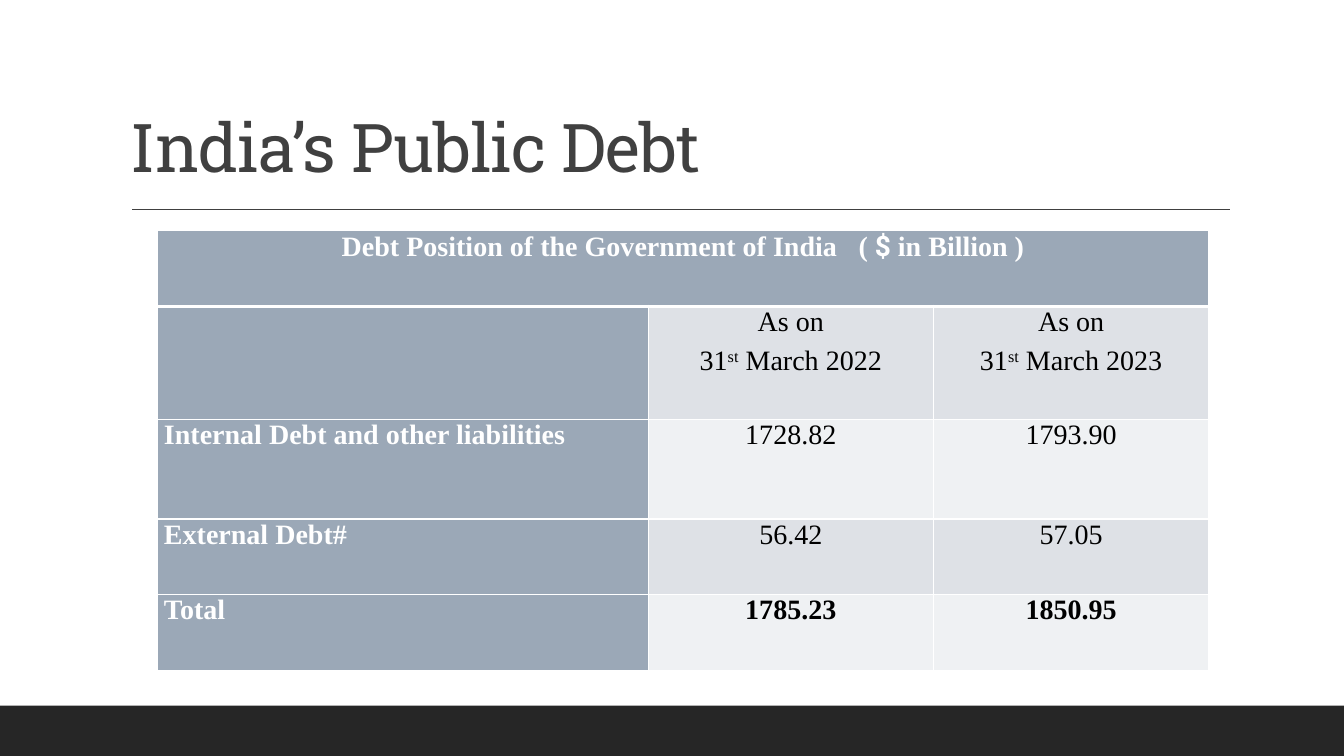
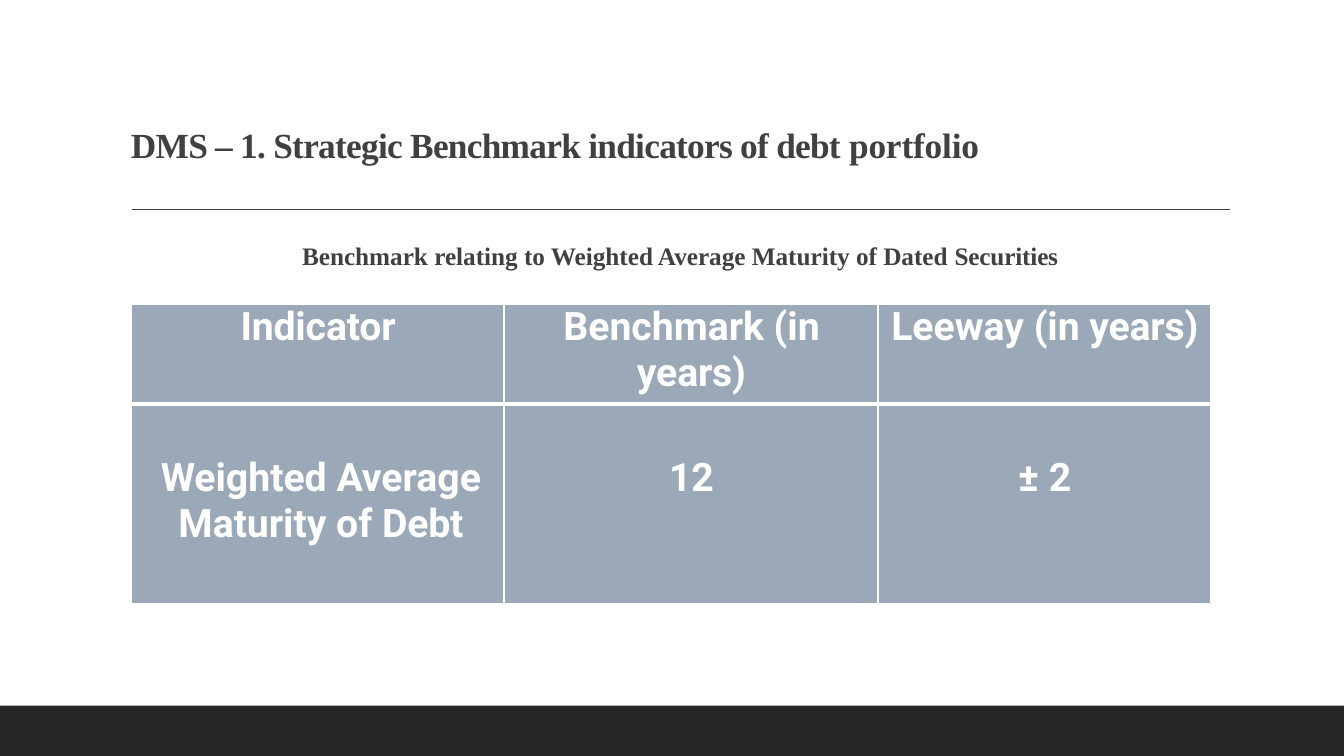
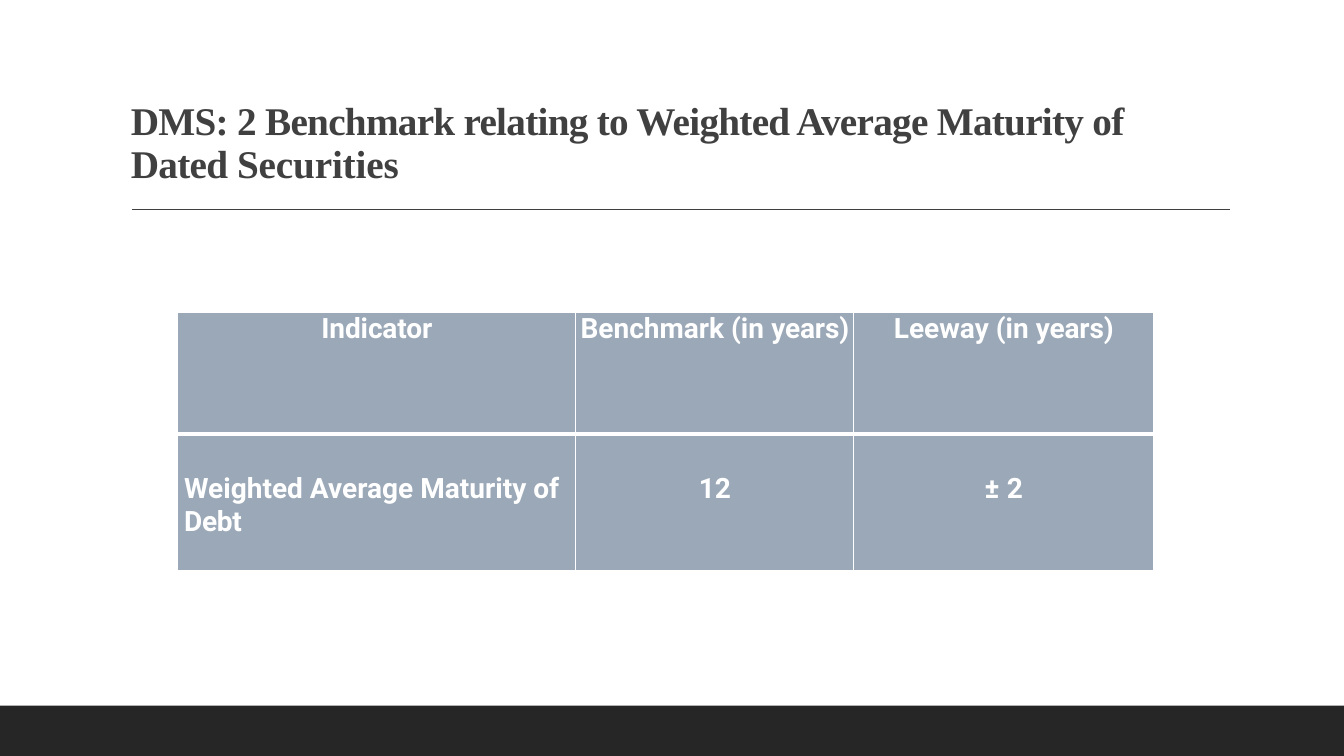
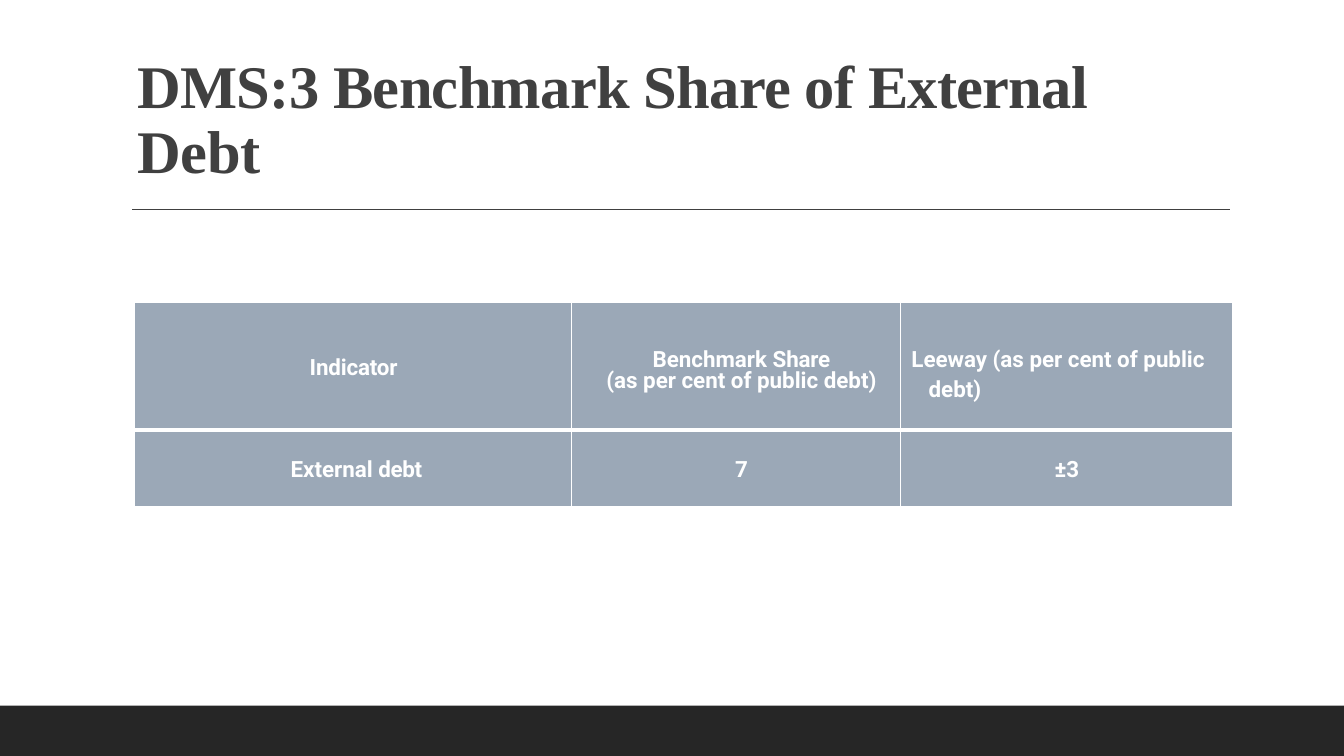
from dataclasses import dataclass

from lxml.etree import SubElement
from pptx import Presentation
from pptx.dml.color import RGBColor
from pptx.enum.shapes import MSO_CONNECTOR, MSO_SHAPE
from pptx.enum.text import MSO_ANCHOR, PP_ALIGN
from pptx.oxml import parse_xml
from pptx.oxml.ns import nsdecls, qn
from pptx.util import Inches, Pt

COLOURS = {
    "band": "262626",
    "title": "404040",
    "header": "9BA8B7",
    "dark_row": "DEE1E6",
    "light_row": "EFF1F3",
    "white": "FFFFFF",
    "black": "000000",
}
SERIF, SANS, SLAB = "Times New Roman", "Roboto", "Roboto Slab"
BLANK_LAYOUT = 6
TITLE_HEIGHT = 21.2


def colour(name):
    return RGBColor.from_string(COLOURS[name])


@dataclass
class Run:
    text: str
    spacing: float = 0
    font: str = ""
    raised: bool = False


@dataclass
class Style:
    size: float
    font: str = SANS
    colour: str = "white"
    bold: bool = True
    align: PP_ALIGN = PP_ALIGN.CENTER
    line_spacing: object = None
    space_after: float = 0


@dataclass
class Cell:
    """Paragraphs are lists of runs; top, left, right and hang are percentages of the slide."""
    paragraphs: list
    style: Style
    fill: str = "header"
    top: float = 0
    left: float = 0.08
    right: float = 0
    hang: float = 0
    columns: int = 1


class Deck:
    """Holds the shared style and the current slide; lengths are percentages of its size."""

    def __init__(self):
        self.presentation = Presentation()
        self.presentation.slide_width = Inches(13.33)
        self.presentation.slide_height = Inches(7.5)
        self.slide = None

    def x(self, share):
        return round(self.presentation.slide_width * share / 100)

    def y(self, share):
        return round(self.presentation.slide_height * share / 100)

    def new_slide(self):
        layout = self.presentation.slide_layouts[BLANK_LAYOUT]
        self.slide = self.presentation.slides.add_slide(layout)
        self.band()
        self.rule()

    def band(self):
        shape = self.slide.shapes.add_shape(
            MSO_SHAPE.RECTANGLE, 0, self.y(93.33), self.x(100), self.y(6.67))
        shape.shadow.inherit = False
        shape.fill.solid()
        shape.fill.fore_color.rgb = colour("band")
        shape.line.fill.background()

    def rule(self):
        height = self.y(27.7)
        connector = self.slide.shapes.add_connector(
            MSO_CONNECTOR.STRAIGHT, self.x(9.83), height, self.x(91.55), height)
        connector.line.color.rgb = colour("title")
        connector.line.width = Pt(1)
        SubElement(connector._element.spPr, qn("a:effectLst"))

    def fill_frame(self, frame, paragraphs, style, hang=0):
        for index, runs in enumerate(paragraphs):
            paragraph = frame.add_paragraph() if index else frame.paragraphs[0]
            paragraph.alignment = style.align
            paragraph.line_spacing = style.line_spacing
            paragraph.space_after = Pt(style.space_after)
            if hang:
                properties = paragraph._p.get_or_add_pPr()
                properties.set("marL", str(self.x(hang)))
                properties.set("indent", str(-self.x(hang)))
            for item in runs:
                self.run(paragraph, item, style)

    def run(self, paragraph, item, style):
        run = paragraph.add_run()
        run.text = item.text
        run.font.name = item.font or style.font
        run.font.size = Pt(style.size)
        run.font.bold = style.bold
        run.font.color.rgb = colour(style.colour)
        properties = run._r.get_or_add_rPr()
        if item.spacing:
            properties.set("spc", str(round(item.spacing * 100)))
        if item.raised:
            properties.set("baseline", "30000")

    def text(self, left, top, width, height, runs, style, anchor=MSO_ANCHOR.TOP):
        box = self.slide.shapes.add_textbox(
            self.x(left), self.y(top), self.x(width), self.y(height))
        frame = box.text_frame
        frame.word_wrap = True
        frame.vertical_anchor = anchor
        self.fill_frame(frame, [runs], style)

    def title(self, runs, size, font=SERIF, bold=True, left=9, width=82.5, bottom=25.33):
        style = Style(size, font, "title", bold, PP_ALIGN.LEFT, 0.9)
        self.text(left, bottom - TITLE_HEIGHT, width, TITLE_HEIGHT, runs, style,
                  MSO_ANCHOR.BOTTOM)

    def table(self, left, top, widths, heights, rows):
        frame = self.slide.shapes.add_table(
            len(heights), len(widths), self.x(left), self.y(top),
            self.x(sum(widths)), self.y(sum(heights)))
        table = frame.table
        table.first_row = table.horz_banding = False
        for column, width in zip(table.columns, widths):
            column.width = self.x(width)
        for row, height in zip(table.rows, heights):
            row.height = self.y(height)
        for row_index, cells in enumerate(rows):
            for column_index, content in enumerate(cells):
                cell = table.cell(row_index, column_index)
                self.fill_cell(cell, content)
                self.cell_borders(cell, row_index)
                if content.columns > 1:
                    cell.merge(table.cell(row_index, column_index + content.columns - 1))

    def fill_cell(self, cell, content):
        cell.fill.solid()
        cell.fill.fore_color.rgb = colour(content.fill)
        cell.margin_left, cell.margin_right = self.x(content.left), self.x(content.right)
        cell.margin_top, cell.margin_bottom = self.y(content.top), 0
        self.fill_frame(cell.text_frame, content.paragraphs, content.style, content.hang)

    def cell_borders(self, cell, row_index):
        """White lines, with a thick one below the first row."""
        widths = {"L": 1, "R": 1, "T": 3 if row_index == 1 else 1,
                  "B": 3 if row_index == 0 else 1}
        properties = cell._tc.get_or_add_tcPr()
        for position, (side, width) in enumerate(widths.items()):
            properties.insert(position, parse_xml(
                f'<a:ln{side} {nsdecls("a")} w="{Pt(width)}"><a:solidFill>'
                f'<a:srgbClr val="{COLOURS["white"]}"/></a:solidFill></a:ln{side}>'))


def public_debt_slide(deck):
    deck.new_slide()
    deck.title([Run("India’s Public Debt", -0.5)], 48, SLAB, False)

    def cell(paragraphs, fill="header", columns=1, **changes):
        style = Style(20, SERIF, space_after=6, **changes)
        return Cell(paragraphs, style, fill, left=0.5, right=0.5, columns=columns)

    heading = [Run("Debt Position of the Government of India"), Run(" ", 10), Run("( "),
               Run("$ ", font=SANS), Run("in Billion )")]
    dates = [cell([[Run("As on")],
                   [Run("31"), Run("st", raised=True), Run(f" March {year}")]],
                  "dark_row", colour="black", bold=False) for year in (2022, 2023)]
    rows = [[cell([heading], columns=3)], [cell([]), *dates]]
    debts = [("Internal Debt and other liabilities", "1728.82", "1793.90"),
             ("External Debt#", "56.42", "57.05"),
             ("Total", "1785.23", "1850.95")]
    for index, (label, *values) in enumerate(debts):
        fill = "dark_row" if index % 2 else "light_row"
        rows.append([cell([[Run(label)]], align=PP_ALIGN.LEFT)]
                    + [cell([[Run(value)]], fill, colour="black", bold=label == "Total")
                       for value in values])
    deck.table(11.7, 30.53, [36.53, 21.23, 20.48], [10, 14.93, 13.2, 10, 10], rows)


def maturity_table(deck, left, top, widths, heights, size, gap, label_align):
    """Gap is the space above the text of the second row."""
    style = Style(size)
    headings = [[Run("Indicator", -0.1)],
                [Run("Benchmark (in "), Run("years)", -0.1)],
                [Run("Leeway (in"), Run(" years)", -0.1)]]
    label = [Run("Weighted Average Maturity of "), Run("Debt", -0.2)]
    values = [[Run("12")], [Run("± "), Run("2", -0.5)]]
    deck.table(left, top, widths, heights, [
        [Cell([runs], style) for runs in headings],
        [Cell([label], Style(size, align=label_align), top=gap, left=0.5)]
        + [Cell([runs], style, top=gap) for runs in values],
    ])


def indicators_slide(deck):
    deck.new_slide()
    deck.title([Run("DMS – 1. Strategic Benchmark indicators of debt ", -0.5),
                Run("portfolio", -0.1)], 25.2, bottom=22.67)
    deck.text(9.35, 30.8, 82.5, 5.3,
              [Run("Benchmark relating to Weighted Average Maturity of Dated "),
               Run("Securities", -0.1)],
              Style(18, SERIF, "title", line_spacing=1.1))
    maturity_table(deck, 9.75, 40.27, [27.75, 27.83, 24.75], [13.2, 26.4],
                   28, 6.8, PP_ALIGN.CENTER)


def maturity_slide(deck):
    deck.new_slide()
    deck.title([Run("DMS: 2 Benchmark relating to Weighted Average Maturity of Dated ", -0.5),
                Run("Securities", -0.1)], 28)
    maturity_table(deck, 13.2, 41.33, [29.6, 20.7, 22.3], [16.13, 18],
                   20, 5.07, PP_ALIGN.LEFT)


def external_debt_slide(deck):
    deck.new_slide()
    deck.title([Run("DMS:3 Benchmark Share of External ", -0.5), Run("Debt", -0.2)],
               43.2, left=9.5, width=75.7)
    style = Style(16)
    tight = Style(16, line_spacing=Pt(14.5))
    loose = Style(16, align=PP_ALIGN.LEFT, line_spacing=1.15)
    benchmark = [[Run("Benchmark "), Run("Share", -0.1)],
                 [Run("(as per cent of public debt)")]]
    values = [([Run("External "), Run("debt", -0.2)], 0.5),
              ([Run("7", -0.5)], 0.8),
              ([Run("±3", -0.2)], 0.08)]
    deck.table(10, 40, [32.55, 24.45, 24.7], [16.9, 10.1], [
        [Cell([[Run("Indicator", -0.1)]], style, top=6.93),
         Cell(benchmark, tight, top=6.67, left=0.8),
         Cell([[Run("Leeway (as per cent of public debt)")]], loose,
              top=5.33, left=0.82, hang=1.28)],
        [Cell([runs], tight, top=4.3, left=left) for runs, left in values],
    ])


def main():
    deck = Deck()
    public_debt_slide(deck)
    indicators_slide(deck)
    maturity_slide(deck)
    external_debt_slide(deck)
    deck.presentation.save("out.pptx")


if __name__ == "__main__":
    main()
